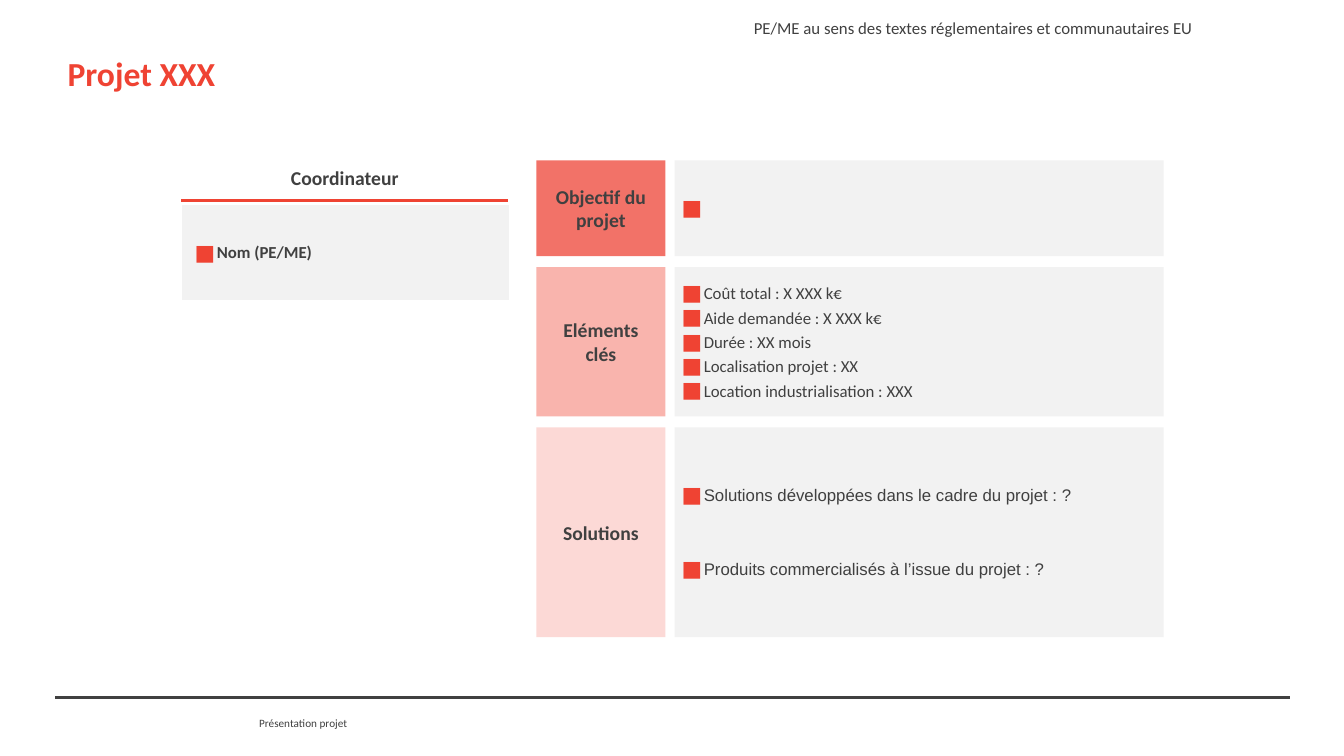
from dataclasses import dataclass

from lxml.etree import SubElement
from pptx import Presentation
from pptx.dml.color import RGBColor
from pptx.enum.shapes import MSO_CONNECTOR as CONN, MSO_SHAPE as SHAPE
from pptx.enum.text import MSO_ANCHOR as ANCHOR, MSO_AUTO_SIZE as AUTO, PP_ALIGN as ALIGN
from pptx.oxml.ns import qn
from pptx.util import Inches, Pt


@dataclass(frozen=True)
class Theme:
    """Colours, fonts and type sizes of the slide."""
    red: str = "EF4333"
    ink: str = "404040"
    white: str = "FFFFFF"
    panel: str = "F2F2F2"
    tints: tuple = ("F27268", "F9B4AD", "FCD9D6")
    font: str = "Calibri"
    alt_font: str = "Arial"
    title: int = 24
    label: int = 14
    body: int = 12
    footer: int = 8


T = Theme()


def apply(obj, **values):
    """Set each given attribute on the object."""
    for name, value in values.items():
        setattr(obj, name, value)


def place(sp, box):
    """Move a shape to a box given in inches."""
    apply(sp, **dict(zip(("left", "top", "width", "height"), map(Inches, box))))


def fill(obj, color):
    """Give a shape or cell a solid fill."""
    obj.fill.solid()
    obj.fill.fore_color.rgb = RGBColor.from_string(color)


def frame(sp, anchor, inset_x=0, inset_y=0, wrap=True):
    """Set up the text frame of a shape and return it."""
    tf = sp.text_frame
    apply(tf, word_wrap=wrap, auto_size=AUTO.NONE, vertical_anchor=anchor,
          margin_left=Inches(inset_x), margin_right=Inches(inset_x),
          margin_top=Inches(inset_y), margin_bottom=Inches(inset_y))
    return tf


def write(p, text, size, color=T.ink, font=T.font, bold=False, align=ALIGN.LEFT, after=0):
    """Write formatted text into a paragraph."""
    apply(p, text=text, alignment=align, space_before=Pt(0), space_after=Pt(after))
    for r in p.runs:
        apply(r.font, name=font, size=Pt(size), bold=bold)
        r.font.color.rgb = RGBColor.from_string(color)


def bullet(p):
    """Give a paragraph a red square bullet with a hanging indent."""
    pPr = p._p.get_or_add_pPr()
    pPr.set("marL", str(Inches(0.25)))
    pPr.set("indent", str(Inches(-0.22)))
    SubElement(SubElement(pPr, qn("a:buClr")), qn("a:srgbClr"), val=T.red)
    SubElement(pPr, qn("a:buSzPct"), val="130000")
    SubElement(pPr, qn("a:buFont"), typeface=T.font)
    SubElement(pPr, qn("a:buChar"), char="■")


def bullets(tf, items, font=T.font, bold=False, after=3):
    """Fill a text frame with a bulleted list."""
    for i, item in enumerate(items):
        p = tf.add_paragraph() if i else tf.paragraphs[0]
        bullet(p)
        last = i == len(items) - 1
        write(p, item, T.body, font=font, bold=bold, after=3 if last else after)


def rect(slide, box, color):
    """Add a plain filled rectangle."""
    sp = slide.shapes.add_shape(SHAPE.RECTANGLE, *map(Inches, box))
    sp.shadow.inherit = False
    sp.line.fill.background()
    fill(sp, color)
    return sp


def rule(slide, x, y, width, color, weight):
    """Draw a horizontal line."""
    ln = slide.shapes.add_connector(CONN.STRAIGHT, *map(Inches, (x, y, x + width, y)))
    ln.line.color.rgb = RGBColor.from_string(color)
    ln.line.width = Pt(weight)
    SubElement(ln._element.spPr, qn("a:effectLst"))


def note(slide, box, text, size, align, inset_x=0, inset_y=0):
    """Add a single line of small text."""
    sp = slide.shapes.add_textbox(*map(Inches, box))
    tf = frame(sp, ANCHOR.TOP, inset_x, inset_y, wrap=False)
    write(tf.paragraphs[0], text, size, align=align)


def header(slide, box):
    """Place the title and the note on the definition used."""
    x, y, w, h = box
    place(slide.shapes.title, box)
    tf = frame(slide.shapes.title, ANCHOR.MIDDLE, 0, 0.05)
    write(tf.paragraphs[0], "Projet XXX", T.title, T.red, bold=True)
    note(slide, (x + 6.63, y - 0.17, 4.63, 0.5),
         "PE/ME au sens des textes réglementaires et communautaires EU",
         T.body, ALIGN.RIGHT, 0.1, 0.05)


def coordinator(slide, box):
    """Place the coordinator heading above its one-cell table."""
    x, y, w, h = box
    heading = rect(slide, (x, y, w, 0.44), T.white)
    write(frame(heading, ANCHOR.BOTTOM, 0.1, 0.1).paragraphs[0], "Coordinateur",
          T.label, bold=True, align=ALIGN.CENTER)
    rule(slide, x + 0.01, y + 0.45, w - 0.02, T.red, 2)
    gf = slide.shapes.add_table(1, 1, *map(Inches, (x + 0.01, y + 0.49, w - 0.01, h - 0.49)))
    apply(gf.table, first_row=False, horz_banding=False)
    cell = gf.table.cell(0, 0)
    cell.vertical_anchor = ANCHOR.MIDDLE
    bullets(cell.text_frame, ["Nom (PE/ME)"], bold=True)
    border = SubElement(cell._tc.get_or_add_tcPr(), qn("a:lnB"), w=str(Pt(3)))
    SubElement(SubElement(border, qn("a:solidFill")), qn("a:srgbClr"), val=T.white)
    fill(cell, T.panel)


def summary(slide, box):
    """Stack the labelled panels of the project summary."""
    x, y, w, h = box
    label_w, gap_x, gap_y = 1.28, 0.09, 0.11
    panel_x, panel_w = x + label_w + gap_x, w - label_w - gap_x
    goal = rect(slide, (panel_x, y, panel_w, 0.95), T.panel)
    key_facts, solutions = list(slide.placeholders)[1:]
    rows = [
        ("Objectif du projet", goal, 0.95, [" "], {}),
        ("Eléments\vclés", key_facts, 1.48,
         ["Coût total : X XXX k€", "Aide demandée : X XXX k€", "Durée : XX mois",
          "Localisation projet : XX", "Location industrialisation : XXX"], {}),
        ("Solutions", solutions, 2.08,
         ["Solutions développées dans le cadre du projet : ?",
          "Produits commercialisés à l’issue du projet : ?"],
         {"font": T.alt_font, "after": 38.5}),
    ]
    for (label, panel, row_h, items, style), tint in zip(rows, T.tints):
        sp = rect(slide, (x, y, label_w, row_h), tint)
        write(frame(sp, ANCHOR.MIDDLE).paragraphs[0], label, T.label,
              bold=True, align=ALIGN.CENTER)
        place(panel, (panel_x, y, panel_w, row_h))
        fill(panel, T.panel)
        bullets(frame(panel, ANCHOR.MIDDLE, 0.04, 0.04), items, **style)
        y += row_h + gap_y


def footer(slide, box):
    """Place the bottom line and the footer text."""
    x, y, w, h = box
    rule(slide, x, y, w, T.ink, 1.5)
    note(slide, (x + 2.02, y + 0.19, 0.88, h - 0.19), "Présentation projet",
         T.footer, ALIGN.LEFT)


def main():
    """Build and save the project slide."""
    prs = Presentation()
    apply(prs, slide_width=Inches(13.33), slide_height=Inches(7.5))
    slide = prs.slides.add_slide(prs.slide_layouts[3])
    footer(slide, (0.55, 6.92, 12.24, 0.32))
    header(slide, (0.67, 0.3, 12, 0.84))
    coordinator(slide, (1.79, 1.54, 3.26, 1.45))
    summary(slide, (5.32, 1.59, 6.22, 4.73))
    prs.save("out.pptx")


if __name__ == "__main__":
    main()
